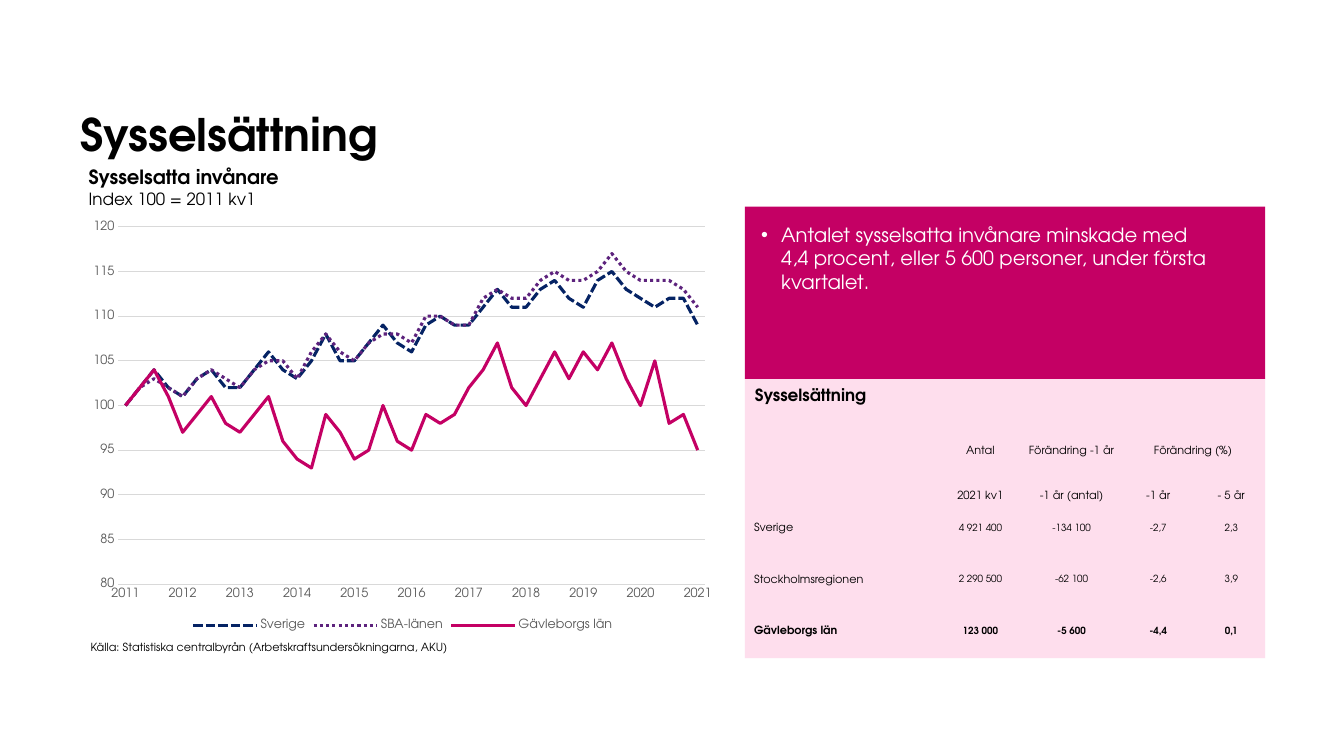
from dataclasses import dataclass
from typing import Any, NamedTuple, Optional

from lxml import etree
from pptx import Presentation, util as u
from pptx.chart.data import CategoryChartData
from pptx.dml.color import RGBColor
from pptx.enum import chart as ch, dml, shapes, text as tx
from pptx.oxml.ns import qn


@dataclass(frozen=True)
class Theme:
    font: str = "TeX Gyre Adventor"
    black: str = "000000"
    white: str = "FFFFFF"
    grey: str = "595959"
    rule: str = "D9D9D9"
    navy: str = "052364"
    plum: str = "5D237D"
    pink: str = "C40064"
    pale: str = "FEDEED"
    title: float = 32
    body: float = 14
    head: float = 12
    axis: float = 9
    note: float = 8
    cell: float = 7


class Box(NamedTuple):
    """A place on the slide, in percent of its width and height."""
    left: float
    top: float
    width: float
    height: float


class Line(NamedTuple):
    text: str
    size: float
    bold: bool = False


class Trend(NamedTuple):
    name: str
    color: str
    dash: Optional[dml.MSO_LINE]
    vals: list[int]


T = Theme()
WIDE, HIGH = u.Inches(13.333), u.Inches(7.5)
SIDE, SPAN = 55.43, 38.7
PLAIN = "{2D5ABB26-0587-4C30-8999-92F81FD0307C}"

LABELS = [
    (Box(6, 84, 29.03, 3.2), [
        Line("Källa: Statistiska centralbyrån (Arbetskraftsundersökningarna, AKU)", T.note)]),
    (Box(SIDE, 50.27, 9.9, 4), [Line("Sysselsättning", T.head, True)]),
    (Box(5.85, 21.2, 15.9, 7.2), [
        Line("Sysselsatta invånare", T.body, True), Line("Index 100 = 2011 kv1", T.head)]),
]
TRENDS = [
    Trend("Sverige", T.navy, dml.MSO_LINE.SQUARE_DOT, [
        100, 102, 104, 102, 101, 103, 104, 102, 102, 104, 106, 104, 103, 105,
        108, 105, 105, 107, 109, 107, 106, 109, 110, 109, 109, 111, 113, 111,
        111, 113, 114, 112, 111, 114, 115, 113, 112, 111, 112, 112, 109]),
    Trend("SBA-länen", T.plum, dml.MSO_LINE.ROUND_DOT, [
        100, 102, 103, 102, 101, 103, 104, 103, 102, 104, 105, 105, 103, 106,
        108, 106, 105, 107, 108, 108, 107, 110, 110, 109, 109, 112, 113, 112,
        112, 114, 115, 114, 114, 115, 117, 115, 114, 114, 114, 113, 111]),
    Trend("Gävleborgs län", T.pink, None, [
        100, 102, 104, 101, 97, 99, 101, 98, 97, 99, 101, 96, 94, 93,
        99, 97, 94, 95, 100, 96, 95, 99, 98, 99, 102, 104, 107, 102,
        100, 103, 106, 103, 106, 104, 107, 103, 100, 105, 98, 99, 95]),
]
COLS = [1.91, 0.85, 0.96, 0.76, 0.69]
ROWS = [0.45, 0.45, 0.51, 0.51, 0.51]
CELLS = [
    ["", "Antal", "Förändring -1 år", "Förändring (%)", ""],
    ["", "2021 kv1", "-1 år (antal)", "-1 år", "- 5 år"],
    ["Sverige", "4 921 400", "-134 100", "-2,7", "2,3"],
    ["Stockholmsregionen", "2 290 500", "-62 100", "-2,6", "3,9"],
    ["Gävleborgs län", "123 000", "-5 600", "-4,4", "0,1"],
]


def place(box: Box) -> tuple[int, int, int, int]:
    return (int(WIDE * box.left / 100), int(HIGH * box.top / 100),
            int(WIDE * box.width / 100), int(HIGH * box.height / 100))


def style(font: Any, size: float, color: str = T.black, bold: bool = False) -> None:
    font.name, font.size, font.bold = T.font, u.Pt(size), bold
    font.color.rgb = RGBColor.from_string(color)


def inset(frame: Any, gap: float) -> None:
    frame.margin_left = frame.margin_top = u.Inches(gap)
    frame.margin_right = frame.margin_bottom = u.Inches(gap)


def indent(para: Any, left: float, first: float = 0) -> Any:
    props = para._p.get_or_add_pPr()
    props.set("marL", str(u.Inches(left)))
    props.set("indent", str(u.Inches(first)))
    return props


def add_title(slide: Any) -> None:
    title = slide.shapes.title
    title.left, title.top, title.width, title.height = place(Box(6, 4.93, 69.15, 16.27))
    frame = title.text_frame
    frame.text = "Sysselsättning"
    frame.vertical_anchor = tx.MSO_ANCHOR.BOTTOM
    inset(frame, 0)
    para = frame.paragraphs[0]
    para.alignment = tx.PP_ALIGN.LEFT
    style(para.font, T.title, bold=True)


def add_label(slide: Any, box: Box, lines: list[Line]) -> None:
    frame = slide.shapes.add_textbox(*place(box)).text_frame
    frame.word_wrap = False
    frame.auto_size = tx.MSO_AUTO_SIZE.SHAPE_TO_FIT_TEXT
    for i, line in enumerate(lines):
        para = frame.add_paragraph() if i else frame.paragraphs[0]
        para.text = line.text
        style(para.font, line.size, bold=line.bold)


def add_panel(slide: Any, box: Box, color: str) -> Any:
    panel = slide.shapes.add_shape(shapes.MSO_SHAPE.RECTANGLE, *place(box))
    panel.shadow.inherit = False
    panel.fill.solid()
    panel.fill.fore_color.rgb = RGBColor.from_string(color)
    panel.line.fill.background()
    return panel


def add_fact(slide: Any) -> None:
    frame = add_panel(slide, Box(SIDE, 27.33, SPAN, 22.8), T.pink).text_frame
    frame.word_wrap = True
    frame.vertical_anchor = tx.MSO_ANCHOR.TOP
    inset(frame, 0.16)
    para = frame.paragraphs[0]
    para.text = ("Antalet sysselsatta invånare minskade med \n"
                 "4,4 procent, eller 5 600 personer, under första kvartalet.")
    para.alignment = tx.PP_ALIGN.LEFT
    props = indent(para, 0.2, -0.2)
    etree.SubElement(props, qn("a:buFont"), typeface="Arial")
    etree.SubElement(props, qn("a:buChar"), char="•")
    style(para.font, T.body, T.white)


def add_grid(slide: Any) -> None:
    shape = slide.shapes.add_table(len(ROWS), len(COLS),
                                   *place(Box(SIDE, 54.53, SPAN, 32.53)))
    shape.element.find(".//" + qn("a:tableStyleId")).text = PLAIN
    table = shape.table
    table.first_row = table.horz_banding = False
    for col, width in zip(table.columns, COLS):
        col.width = u.Inches(width)
    for row, height in zip(table.rows, ROWS):
        row.height = u.Inches(height)
    table.cell(0, 3).merge(table.cell(0, 4))
    for r, words in enumerate(CELLS):
        for c, word in enumerate(words):
            cell = table.cell(r, c)
            cell.fill.background()
            inset(cell, 0.01)
            cell.vertical_anchor = tx.MSO_ANCHOR.BOTTOM if r < 2 else tx.MSO_ANCHOR.MIDDLE
            para = cell.text_frame.paragraphs[0]
            para.text = word
            if c:
                para.alignment = tx.PP_ALIGN.CENTER
            else:
                indent(para, 0.08)
            style(para.font, T.cell if r > 1 and c else T.note, bold=r == len(ROWS) - 1)


def add_trends(slide: Any) -> None:
    data = CategoryChartData()
    data.categories = ["" if i % 4 else str(2011 + i // 4)
                       for i in range(len(TRENDS[0].vals))]
    for trend in TRENDS:
        data.add_series(trend.name, trend.vals)
    chart = slide.shapes.add_chart(ch.XL_CHART_TYPE.LINE,
                                   *place(Box(6, 28.13, 47.93, 55.87)), data).chart
    style(chart.font, 10)
    chart.has_title = False
    chart.has_legend = True
    chart.legend.position = ch.XL_LEGEND_POSITION.BOTTOM
    chart.legend.include_in_layout = False
    style(chart.legend.font, T.axis, T.grey)
    years, scale = chart.category_axis, chart.value_axis
    for axis in (years, scale):
        axis.major_tick_mark = axis.minor_tick_mark = ch.XL_TICK_MARK.NONE
        style(axis.tick_labels.font, T.axis, T.grey)
    scale.minimum_scale, scale.maximum_scale, scale.major_unit = 80, 120, 5
    scale.format.line.fill.background()
    for rule in (years.format.line, scale.major_gridlines.format.line):
        rule.color.rgb = RGBColor.from_string(T.rule)
        rule.width = u.Pt(0.75)
    chart.plots[0].vary_by_categories = False
    for series, trend in zip(chart.plots[0].series, TRENDS):
        series.smooth = False
        series.marker.style = ch.XL_MARKER_STYLE.NONE
        line = series.format.line
        line.color.rgb = RGBColor.from_string(trend.color)
        line.width = u.Pt(2.25)
        if trend.dash:
            line.dash_style = trend.dash


def main() -> None:
    deck = Presentation()
    deck.slide_width, deck.slide_height = WIDE, HIGH
    slide = deck.slides.add_slide(deck.slide_layouts.get_by_name("Title Only"))
    add_title(slide)
    add_panel(slide, Box(SIDE, 50, SPAN, 37.07), T.pale)
    add_fact(slide)
    for box, lines in LABELS:
        add_label(slide, box, lines)
    add_grid(slide)
    add_trends(slide)
    deck.save("out.pptx")


if __name__ == "__main__":
    main()
